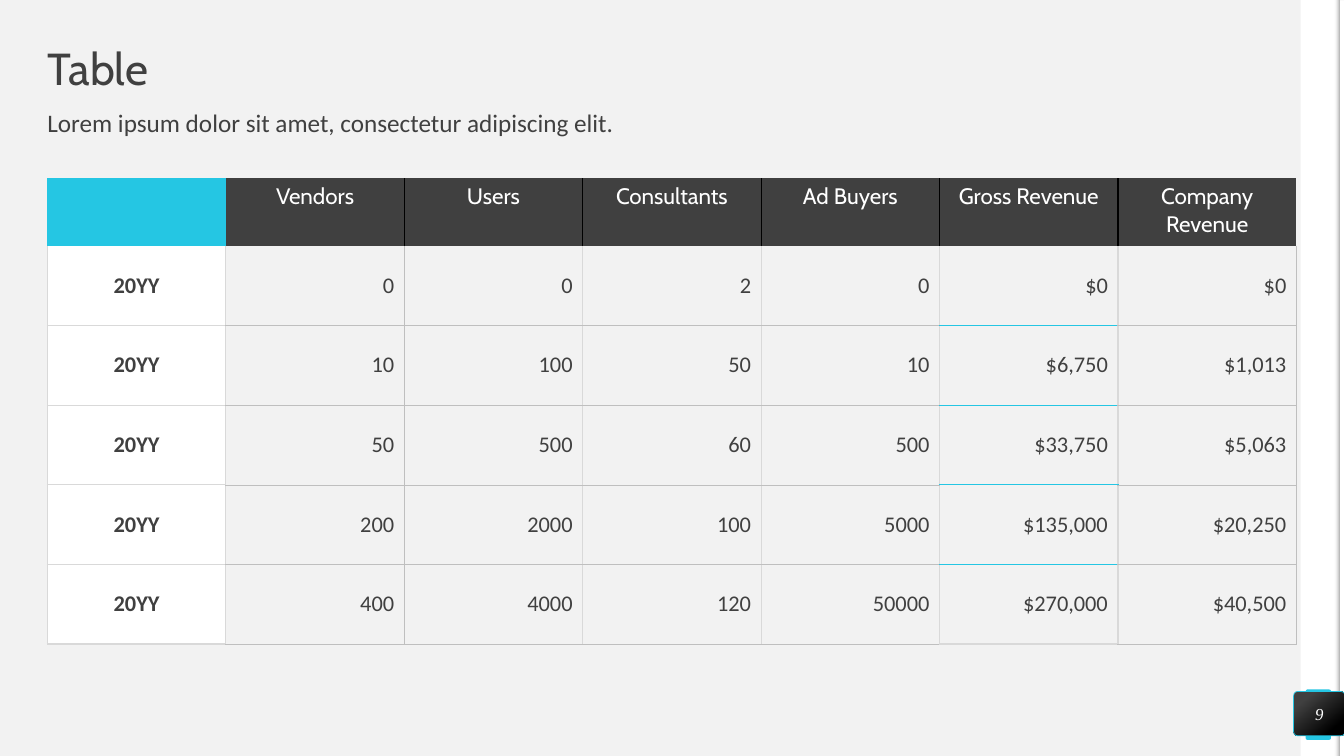
from lxml import etree
from pptx import Presentation
from pptx.dml.color import RGBColor
from pptx.enum import shapes, text
from pptx.oxml import ns
from pptx.util import Inches, Pt

COLORS = {
    "background": "F2F2F2", "white": "FFFFFF", "accent": "25C6E3",
    "dark": "404040", "black": "000000", "shade": "A6A6A6",
    "light_rule": "D9D9D9", "rule": "BFBFBF",
}
THICK = ("light_rule", 1)
THIN = ("rule", 0.25)
ACCENT = ("accent", 1)
BLACK = ("black", 1)

HEADERS = ["", "Vendors", "Users", "Consultants", "Ad Buyers",
           "Gross Revenue", "Company Revenue"]
ROWS = [
    ["20YY", "0", "0", "2", "0", "$0", "$0"],
    ["20YY", "10", "100", "50", "10", "$6,750", "$1,013"],
    ["20YY", "50", "500", "60", "500", "$33,750", "$5,063"],
    ["20YY", "200", "2000", "100", "5000", "$135,000", "$20,250"],
    ["20YY", "400", "4000", "120", "50000", "$270,000", "$40,500"],
]
LAST_ROW, LAST_COL = len(ROWS), len(HEADERS) - 1
REVENUE_COL = 5
ALIGN = text.PP_ALIGN


def rgb(name):
    return RGBColor.from_string(COLORS[name])


def solid(fill, color):
    fill.solid()
    fill.fore_color.rgb = rgb(color)


def gradient(fill, stops, angle):
    fill.gradient()
    fill.gradient_angle = angle
    for stop, (position, color) in zip(fill.gradient_stops, stops):
        stop.position = position
        stop.color.rgb = rgb(color)


def format_text(tf, content, font, size, color, align=ALIGN.LEFT):
    tf.text = content
    p = tf.paragraphs[0]
    p.alignment = align
    p.font.name = font
    p.font.size = Pt(size)
    p.font.color.rgb = rgb(color)
    return p


def clear_insets(tf):
    tf.margin_left = tf.margin_top = tf.margin_right = tf.margin_bottom = 0
    tf.word_wrap = True
    tf.auto_size = text.MSO_AUTO_SIZE.NONE


def place(shape, left, top, width, height):
    shape.left, shape.top = Inches(left), Inches(top)
    shape.width, shape.height = Inches(width), Inches(height)


def add_panel(s, left, top, width, height, color, radius=None, rotation=0):
    kind = shapes.MSO_SHAPE.RECTANGLE if radius is None else shapes.MSO_SHAPE.ROUNDED_RECTANGLE
    sp = s.shapes.add_shape(kind, Inches(left), Inches(top), Inches(width), Inches(height))
    if radius is not None:
        sp.adjustments[0] = radius
    sp.rotation = rotation
    sp.shadow.inherit = False
    sp.line.fill.background()
    solid(sp.fill, color)
    return sp


def add_side_strip(s):
    add_panel(s, 12.9, 0, 0.39, 7.5, "white")
    add_panel(s, 12.95, 6.84, 0.25, 0.5, "accent", radius=0.074)
    add_panel(s, 9.56, 3.73, 7.5, 0.05, "white", rotation=90)
    edge = add_panel(s, 9.51, 3.73, 7.5, 0.05, "white", rotation=90)
    gradient(edge.fill, [(0, "background"), (1, "shade")], 90)
    # The light end of the edge fades out
    light_end = edge.fill.gradient_stops[0].color
    for clr in edge.element.spPr.iter(ns.qn("a:srgbClr")):
        if clr.get("val") == str(light_end.rgb):
            etree.SubElement(clr, ns.qn("a:alpha"), val="0")


def add_headings(s):
    title = s.shapes.title
    place(title, 0.47, 0.47, 12.39, 0.47)
    subtitle = s.shapes.add_textbox(Inches(0.47), Inches(1.1), Inches(12.4), Inches(0.39))
    for sp, content, font, size in (
            (title, "Table", "Cabin", 32),
            (subtitle, "Lorem ipsum dolor sit amet, consectetur adipiscing elit.", "Calibri", 18)):
        clear_insets(sp.text_frame)
        p = format_text(sp.text_frame, content, font, size, "dark")
        p.line_spacing = 0.9
    title.text_frame.vertical_anchor = text.MSO_ANCHOR.MIDDLE


def vertical_rule(row, edge):
    """Rule at the left of column number edge."""
    if row == 0:
        return BLACK if 1 < edge <= LAST_COL else None
    return THIN if edge in (2, LAST_COL + 1) else THICK


def horizontal_rule(row, col):
    """Rule below the given row."""
    if row <= 0:
        return None
    if col == 0:
        return THICK
    if col == REVENUE_COL:
        return THICK if row == LAST_ROW else ACCENT
    return THIN


def set_borders(cell, row, col):
    tcPr = cell._tc.get_or_add_tcPr()
    borders = {
        "lnL": vertical_rule(row, col), "lnR": vertical_rule(row, col + 1),
        "lnT": horizontal_rule(row - 1, col), "lnB": horizontal_rule(row, col),
    }
    for tag, rule in borders.items():
        ln = etree.SubElement(tcPr, ns.qn("a:" + tag))
        if rule is None:
            etree.SubElement(ln, ns.qn("a:noFill"))
            continue
        color, width = rule
        ln.set("w", str(int(Pt(width))))
        fill = etree.SubElement(ln, ns.qn("a:solidFill"))
        etree.SubElement(fill, ns.qn("a:srgbClr"), val=COLORS[color])


def format_cell(cell, row, col, content):
    set_borders(cell, row, col)
    if row == 0:
        solid(cell.fill, "dark" if col else "accent")
        format_text(cell.text_frame, content, "Cabin", 16, "white", ALIGN.CENTER)
        return
    cell.vertical_anchor = text.MSO_ANCHOR.MIDDLE
    align = ALIGN.RIGHT if col else ALIGN.CENTER
    p = format_text(cell.text_frame, content, "Calibri", 16, "dark", align)
    p.font.bold = col == 0
    if col == 0:
        solid(cell.fill, "white")
    elif col == REVENUE_COL:
        solid(cell.fill, "background")
    else:
        cell.fill.background()


def add_revenue_table(s):
    frame = s.shapes.add_table(LAST_ROW + 1, LAST_COL + 1, Inches(0.47), Inches(1.77),
                               Inches(12.39), Inches(4.61))
    table = frame.table
    table.first_row = table.horz_banding = False
    for column in table.columns:
        column.width = Inches(1.77)
    for i, values in enumerate([HEADERS] + ROWS):
        table.rows[i].height = Inches(0.79 if i else 0.67)
        for j, content in enumerate(values):
            format_cell(table.cell(i, j), i, j, content)


def add_page_number(s):
    badge = add_panel(s, 12.83, 6.86, 0.51, 0.44, "dark", radius=0.095)
    gradient(badge.fill, [(0.2, "dark"), (0.82, "black")], 310)
    solid(badge.line.fill, "accent")
    badge.line.width = Pt(0.5)
    tf = badge.text_frame
    clear_insets(tf)
    tf.vertical_anchor = text.MSO_ANCHOR.MIDDLE
    p = format_text(tf, "9", "Times New Roman", 12, "white", ALIGN.CENTER)
    p.font.italic = True


def main():
    prs = Presentation()
    prs.slide_width, prs.slide_height = Inches(13.33), Inches(7.5)
    s = prs.slides.add_slide(prs.slide_layouts[5])
    solid(s.background.fill, "background")
    add_side_strip(s)
    add_headings(s)
    add_revenue_table(s)
    add_page_number(s)
    prs.save("out.pptx")


if __name__ == "__main__":
    main()
